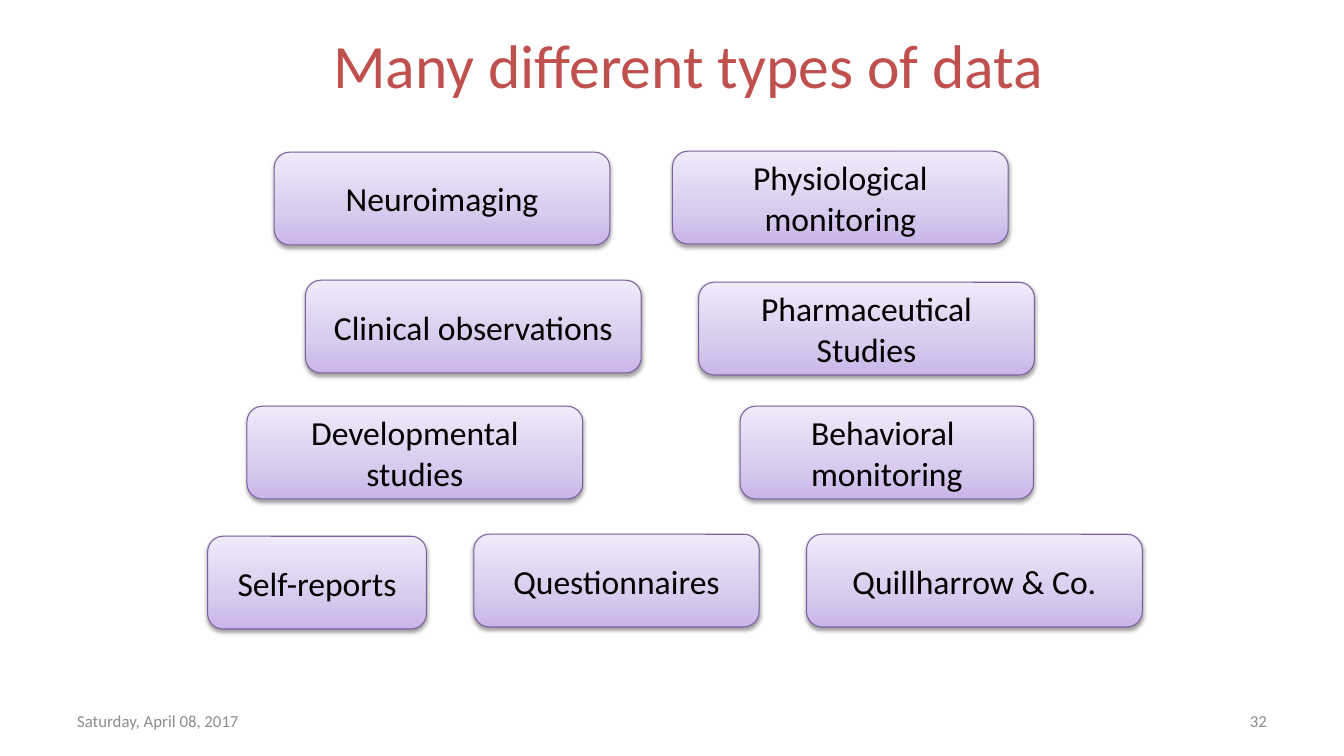
from copy import deepcopy

from lxml import etree
from pptx import Presentation
from pptx import util as u
from pptx.dml.color import RGBColor
from pptx.enum import shapes, text
from pptx.oxml import ns

RED = RGBColor(0xC0, 0x50, 0x4D)
GREY = RGBColor(0x8C, 0x8C, 0x8C)
BLACK = RGBColor(0, 0, 0)
PURPLE = RGBColor(0x7D, 0x60, 0xA0)
LILAC_STOPS = [
    (0, RGBColor(0xC9, 0xB5, 0xE8)),
    (0.35, RGBColor(0xD8, 0xCB, 0xEE)),
    (1, RGBColor(0xF0, 0xEA, 0xF9)),
]
SLIDE_WIDTH, SLIDE_HEIGHT = 13.33, 7.5
CARD_HEIGHT, ROW_PITCH = 0.92, 1.27
WIDE = 3.33

TITLE_FORMAT = {"name": "Calibri", "size": u.Pt(44), "color": RED}
FOOTER_FORMAT = {"name": "Calibri", "size": u.Pt(12), "color": GREY}
CARD_FORMAT = {"name": "Calibri", "size": u.Pt(24), "color": BLACK}

DATA_TYPE_ROWS = [
    [("Neuroimaging", 0.66, 0.01, WIDE), ("Physiological monitoring", 4.61, 0, WIDE)],
    [("Clinical observations", 0.97, 0.01, WIDE), ("Pharmaceutical Studies", 4.87, 0.03, WIDE)],
    [("Developmental studies", 0.39, -0.01, WIDE), ("Behavioral \nmonitoring", 5.28, -0.01, 2.91)],
    [("Self-reports", 0, 0.01, 2.17), ("Questionnaires", 2.64, -0.01, 2.83),
     ("Quillharrow & Co.", 5.94, -0.01, WIDE)],
]


def write(frame, wording, formats, align, anchor):
    """Fill a text frame with one paragraph per line."""
    frame.word_wrap = True
    frame.vertical_anchor = anchor
    frame.text = wording
    for line in frame.paragraphs:
        line.alignment = align
        for run in line.runs:
            for key, value in formats.items():
                if key == "color":
                    run.font.color.rgb = value
                else:
                    setattr(run.font, key, value)


def add_label(slide, box, wording, formats, align, anchor):
    """Place a line of plain text in the box."""
    label = slide.shapes.add_textbox(*map(u.Inches, box))
    write(label.text_frame, wording, formats, align, anchor)


def add_soft_shadow(card):
    """Put a short black shadow below the card."""
    card.shadow.inherit = False
    effects = card.element.spPr.find(ns.qn("a:effectLst"))
    shadow = etree.SubElement(effects, ns.qn("a:outerShdw"), blurRad="40000",
                              dist="20000", dir="5400000", rotWithShape="0")
    tone = etree.SubElement(shadow, ns.qn("a:srgbClr"), val="000000")
    etree.SubElement(tone, ns.qn("a:alpha"), val="38000")


def add_card(slide, box, wording):
    """Draw one rounded lilac card in the box."""
    card = slide.shapes.add_shape(shapes.MSO_SHAPE.ROUNDED_RECTANGLE, *map(u.Inches, box))
    card.fill.gradient()
    card.fill.gradient_angle = 90
    stops = card.element.spPr.find(".//" + ns.qn("a:gsLst"))
    stops.insert(1, deepcopy(stops[0]))
    for stop, (position, color) in zip(card.fill.gradient_stops, LILAC_STOPS):
        stop.position = position
        stop.color.rgb = color
    card.line.color.rgb = PURPLE
    card.line.width = u.Pt(0.75)
    add_soft_shadow(card)
    write(card.text_frame, wording, CARD_FORMAT, text.PP_ALIGN.CENTER, text.MSO_ANCHOR.MIDDLE)


def add_data_types(slide, left, top):
    """Lay the cards out in evenly pitched rows."""
    for row, cards in enumerate(DATA_TYPE_ROWS):
        for wording, offset, nudge, width in cards:
            box = (left + offset, top + row * ROW_PITCH + nudge, width, CARD_HEIGHT)
            add_card(slide, box, wording)


def add_footer(slide, left, top, width, height):
    """Set the date at the left end and the slide number at the right end."""
    part = 3.11
    for wording, start, align in [
        ("Saturday, April 08, 2017", left, text.PP_ALIGN.LEFT),
        ("32", left + width - part, text.PP_ALIGN.RIGHT),
    ]:
        add_label(slide, (start, top, part, height), wording, FOOTER_FORMAT, align,
                  text.MSO_ANCHOR.MIDDLE)


def main():
    """Build and save the slide."""
    deck = Presentation()
    deck.slide_width, deck.slide_height = u.Inches(SLIDE_WIDTH), u.Inches(SLIDE_HEIGHT)
    slide = deck.slides.add_slide(deck.slide_layouts[6])
    add_footer(slide, SLIDE_WIDTH * 0.05, 6.95, SLIDE_WIDTH * 0.9, 0.4)
    add_label(slide, (2.33, 0.22, 9, 0.87), "Many different types of data", TITLE_FORMAT,
              text.PP_ALIGN.CENTER, text.MSO_ANCHOR.TOP)
    add_data_types(slide, 2.06, 1.5)
    deck.save("out.pptx")


if __name__ == "__main__":
    main()
